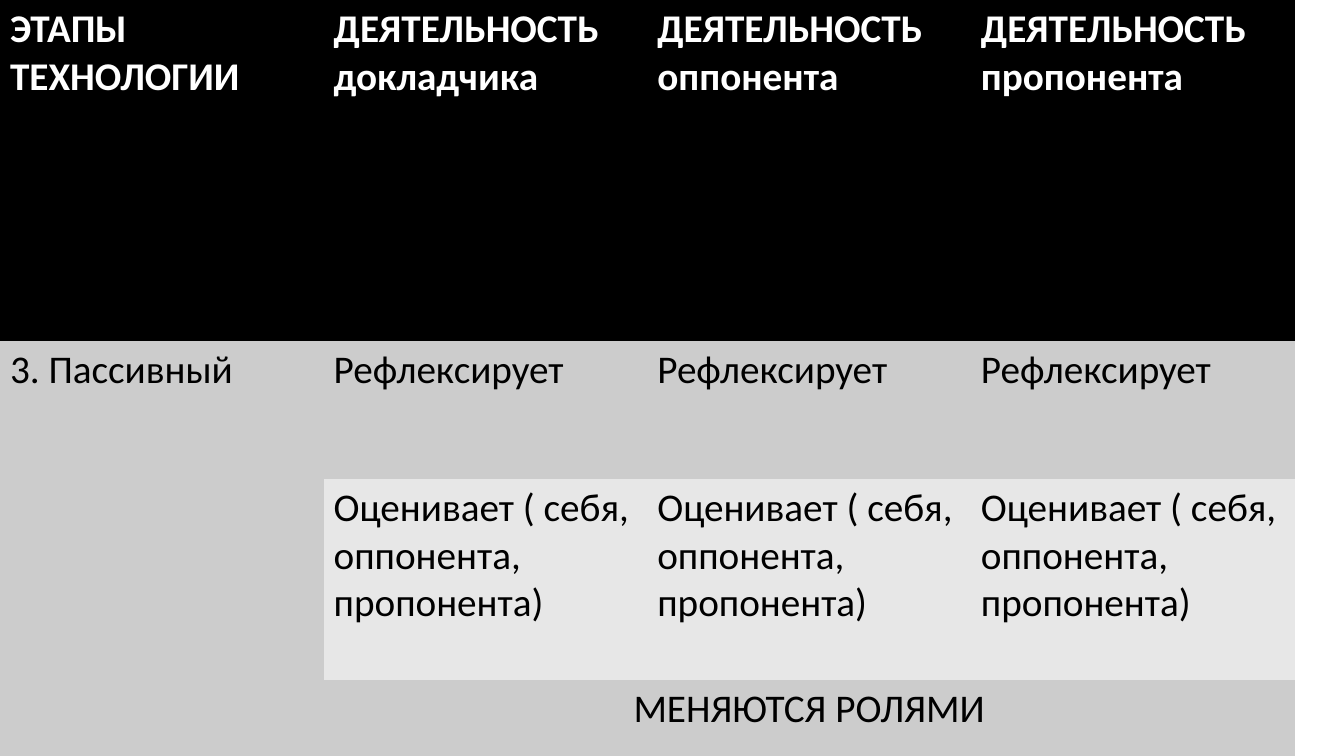
import pptx
import pptx.util
import pptx.dml.color
import pptx.enum.text

# Content
HEAD = ["ЭТАПЫ ТЕХНОЛОГИИ"] + [
    "ДЕЯТЕЛЬНОСТЬ " + role for role in ("докладчика", "оппонента", "пропонента")]
ROWS = [
    HEAD,
    ["3. Пассивный"] + ["Рефлексирует"] * 3,
    [""] + ["Оценивает ( себя, оппонента, пропонента)"] * 3,
    ["", "МЕНЯЮТСЯ РОЛЯМИ", "", ""],
]
FILLS = ["000000", "CCCCCC", "E7E7E7", "CCCCCC"]
STAGE = "CCCCCC"
PLAIN = "{2D5ABB26-0587-4C30-8999-92F81FD0307C}"  # no style, no grid

# Grid in inches
WIDE, HIGH = 13.33, 7.5
COL = 3.21
TALL = [3.38, 1.37, 2.0]
TALL.append(HIGH - sum(TALL))


def inch(size):
    return pptx.util.Inches(size)


def color(code):
    return pptx.dml.color.RGBColor.from_string(code)


def paint(cell, text, fill, head):
    cell.fill.solid()
    cell.fill.fore_color.rgb = color(fill)
    if not text:
        return
    cell.text = text
    font = cell.text_frame.paragraphs[0].runs[0].font
    look = {"name": "Calibri", "size": pptx.util.Pt(28), "bold": head}
    for key, value in look.items():
        setattr(font, key, value)
    font.color.rgb = color("FFFFFF" if head else "000000")


def main():
    deck = pptx.Presentation()
    deck.slide_width, deck.slide_height = inch(WIDE), inch(HIGH)
    slide = deck.slides.add_slide(deck.slide_layouts[6])

    # Table frame
    count = len(HEAD)
    frame = slide.shapes.add_table(
        len(ROWS), count, 0, 0, inch(COL * count), inch(HIGH))
    table = frame.table
    table.horz_banding = False
    style = table._tbl.tblPr.find(pptx.oxml.ns.qn("a:tableStyleId"))
    style.text = PLAIN
    for col in table.columns:
        col.width = inch(COL)
    for row, size in zip(table.rows, TALL):
        row.height = inch(size)

    # Merged stage column and closing line
    table.cell(1, 0).merge(table.cell(3, 0))
    table.cell(3, 1).merge(table.cell(3, 3))

    # Cells
    for r, texts in enumerate(ROWS):
        for c, text in enumerate(texts):
            fill = STAGE if r and c == 0 else FILLS[r]
            paint(table.cell(r, c), text, fill, r == 0)
    close = table.cell(3, 1).text_frame.paragraphs[0]
    close.alignment = pptx.enum.text.PP_ALIGN.CENTER

    deck.save("out.pptx")


if __name__ == "__main__":
    main()
